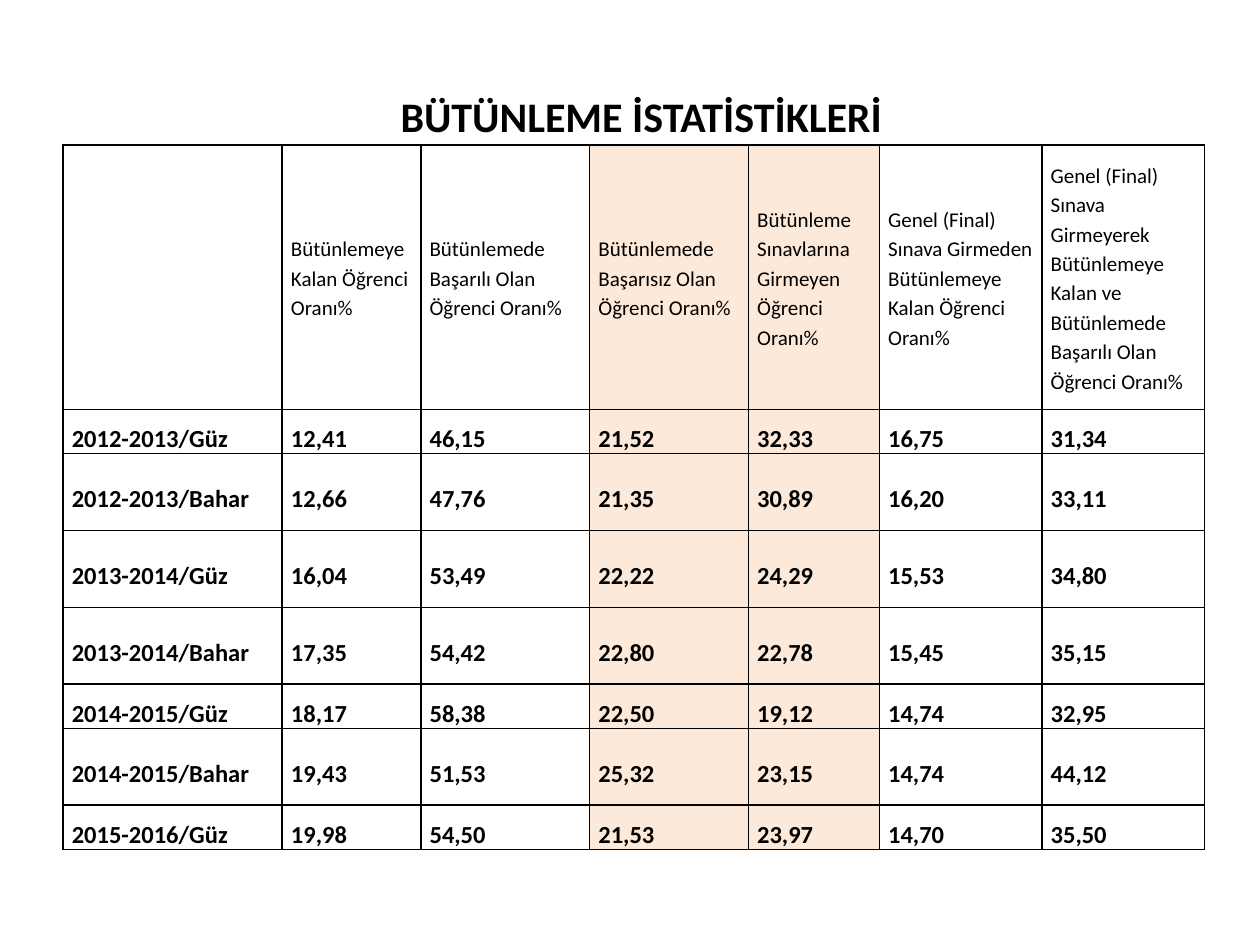
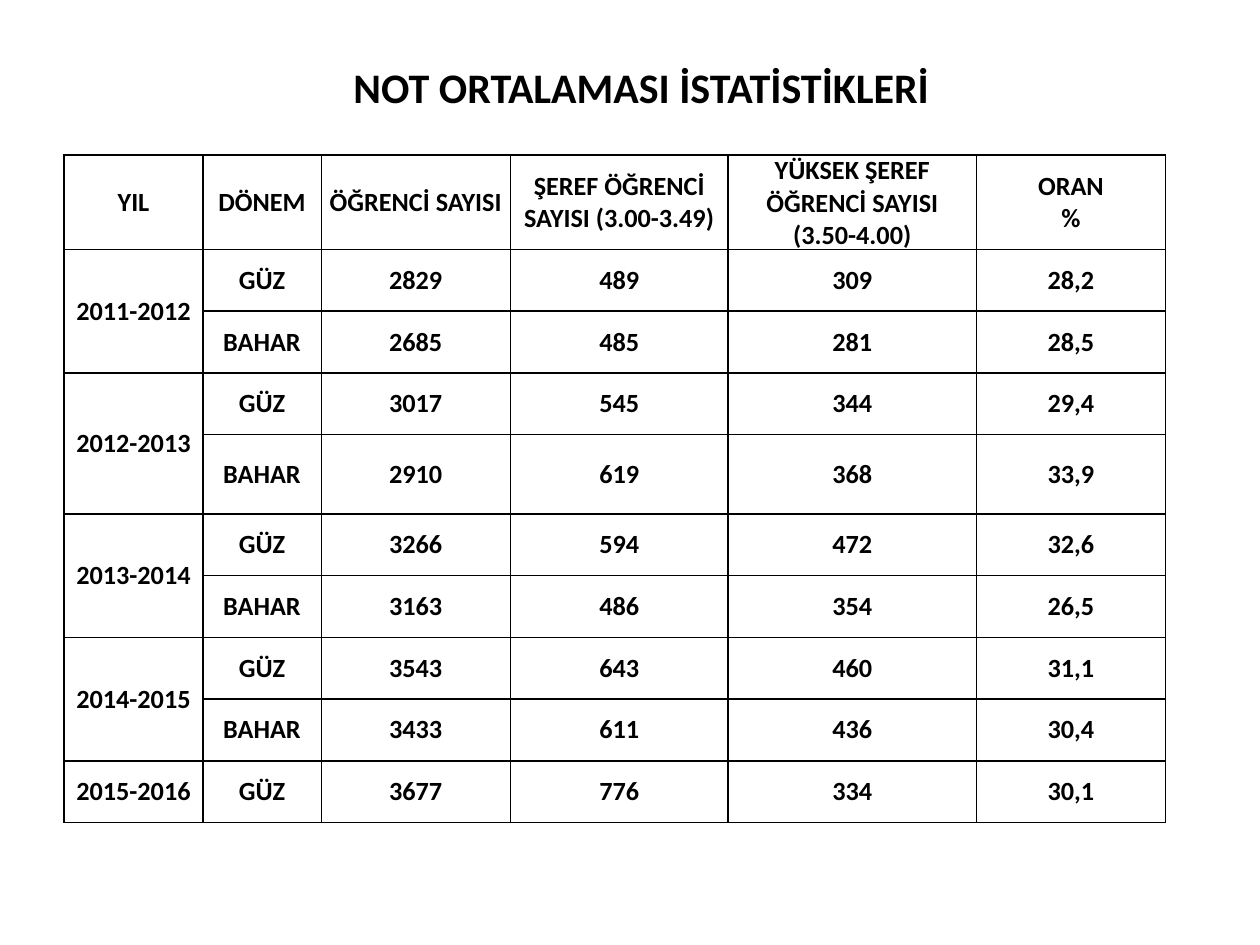
import pptx
import pptx.util
import pptx.dml.color
import pptx.enum.text
import pptx.oxml
import pptx.oxml.ns

Inches = pptx.util.Inches
Pt = pptx.util.Pt
ALIGN = pptx.enum.text.PP_ALIGN
MIDDLE = pptx.enum.text.MSO_ANCHOR.MIDDLE
TOP = pptx.enum.text.MSO_ANCHOR.TOP

COLORS = {"ink": "000000", "paper": "FFFFFF", "peach": "FDE9D9"}
TITLE = {"size": 24, "bold": True, "align": ALIGN.CENTER}
RATE_HEAD = {"size": 12, "bold": False, "align": ALIGN.LEFT, "space": 1.15}
RATE_BODY = {"size": 14, "bold": True, "align": ALIGN.LEFT, "space": 1.5}
GRADE = {"size": 15, "bold": True, "align": ALIGN.CENTER}

RATES = [
    ["", "Bütünlemeye Kalan Öğrenci Oranı%",
     "Bütünlemede Başarılı Olan Öğrenci Oranı%",
     "Bütünlemede Başarısız Olan Öğrenci Oranı%",
     "Bütünleme Sınavlarına Girmeyen Öğrenci Oranı%",
     "Genel (Final) Sınava Girmeden Bütünlemeye Kalan Öğrenci Oranı%",
     "Genel (Final) Sınava Girmeyerek Bütünlemeye Kalan ve "
     "Bütünlemede Başarılı Olan Öğrenci Oranı%"],
    ["2012-2013/Güz", "12,41", "46,15", "21,52", "32,33", "16,75", "31,34"],
    ["2012-2013/Bahar", "12,66", "47,76", "21,35", "30,89", "16,20", "33,11"],
    ["2013-2014/Güz", "16,04", "53,49", "22,22", "24,29", "15,53", "34,80"],
    ["2013-2014/Bahar", "17,35", "54,42", "22,80", "22,78", "15,45", "35,15"],
    ["2014-2015/Güz", "18,17", "58,38", "22,50", "19,12", "14,74", "32,95"],
    ["2014-2015/Bahar", "19,43", "51,53", "25,32", "23,15", "14,74", "44,12"],
    ["2015-2016/Güz", "19,98", "54,50", "21,53", "23,97", "14,70", "35,50"],
]
GRADES = [
    ["YIL", "DÖNEM", "ÖĞRENCİ SAYISI", "ŞEREF ÖĞRENCİ SAYISI (3.00-3.49)",
     "YÜKSEK ŞEREF ÖĞRENCİ SAYISI (3.50-4.00)", "ORAN\n%"],
    ["2011-2012", "GÜZ", "2829", "489", "309", "28,2"],
    ["", "BAHAR", "2685", "485", "281", "28,5"],
    ["2012-2013", "GÜZ", "3017", "545", "344", "29,4"],
    ["", "BAHAR", "2910", "619", "368", "33,9"],
    ["2013-2014", "GÜZ", "3266", "594", "472", "32,6"],
    ["", "BAHAR", "3163", "486", "354", "26,5"],
    ["2014-2015", "GÜZ", "3543", "643", "460", "31,1"],
    ["", "BAHAR", "3433", "611", "436", "30,4"],
    ["2015-2016", "GÜZ", "3677", "776", "334", "30,1"],
]


def paint(fill, name):
    fill.solid()
    fill.fore_color.rgb = pptx.dml.color.RGBColor.from_string(COLORS[name])


def write(frame, text, form):
    frame.text = text
    frame.word_wrap = True
    for para in frame.paragraphs:
        para.alignment = form["align"]
        para.line_spacing = form.get("space", 1.0)
        looks = {"name": "Calibri", "size": Pt(form["size"]), "bold": form["bold"]}
        for run in para.runs:
            for key, value in looks.items():
                setattr(run.font, key, value)
            paint(run.font.fill, "ink")


def add_title(slide, text, height):
    box = slide.shapes.add_textbox(Inches(0.59), Inches(0.29), Inches(9), Inches(height))
    paint(box.fill, "paper")
    write(box.text_frame, text, TITLE)
    box.text_frame.vertical_anchor = MIDDLE


def rule(cell):
    props = cell._tc.get_or_add_tcPr()
    for side in "LRTB":
        props.append(pptx.oxml.parse_xml(
            f'<a:ln{side} {pptx.oxml.ns.nsdecls("a")} w="{Pt(1)}"><a:solidFill>'
            f'<a:srgbClr val="{COLORS["ink"]}"/></a:solidFill></a:ln{side}>'))


def add_grid(slide, data, spot, widths, heights, pad, head, body, tinted=()):
    left, top = spot
    frame = slide.shapes.add_table(
        len(data), len(widths), Inches(left), Inches(top),
        Inches(sum(widths)), Inches(sum(heights)))
    table = frame.table
    table.first_row = table.horz_banding = False
    for col, width in zip(table.columns, widths):
        col.width = Inches(width)
    for row, height in zip(table.rows, heights):
        row.height = Inches(height)
    layout = {"margin_left": Inches(pad), "margin_right": Inches(pad),
              "margin_top": 0, "margin_bottom": 0, "vertical_anchor": MIDDLE}
    for r, line in enumerate(data):
        for c, text in enumerate(line):
            cell = table.cell(r, c)
            for key, value in layout.items():
                setattr(cell, key, value)
            rule(cell)
            paint(cell.fill, "peach" if c in tinted else "paper")
            if text:
                write(cell.text_frame, text, body if r else head)
    return table


def add_rates(slide):
    add_title(slide, "BÜTÜNLEME İSTATİSTİKLERİ", 1.25)
    table = add_grid(slide, RATES, (0.5, 1.15),
                     [1.74, 1.1, 1.34, 1.26, 1.04, 1.29, 1.29],
                     [2.1, 0.31, 0.61, 0.61, 0.61, 0.31, 0.61, 0.31],
                     0.07, RATE_HEAD, RATE_BODY, tinted=(3, 4))
    for cell in table.rows[len(RATES) - 1].cells:
        cell.vertical_anchor = TOP


def add_grades(slide):
    add_title(slide, "NOT ORTALAMASI İSTATİSTİKLERİ", 0.79)
    heights = [0.53] + [0.49] * 3 + [0.63] + [0.49] * 5
    table = add_grid(slide, GRADES, (0.51, 1.23),
                     [1.1, 0.94, 1.5, 1.73, 1.97, 1.5], heights, 0.03, GRADE, GRADE)
    for r, line in enumerate(GRADES):
        if not line[0]:
            table.cell(r - 1, 0).merge(table.cell(r, 0))


def main():
    deck = pptx.Presentation()
    deck.slide_width, deck.slide_height = Inches(10), Inches(7.5)
    for build in (add_rates, add_grades):
        build(deck.slides.add_slide(deck.slide_layouts[6]))
    deck.save("out.pptx")


if __name__ == "__main__":
    main()
